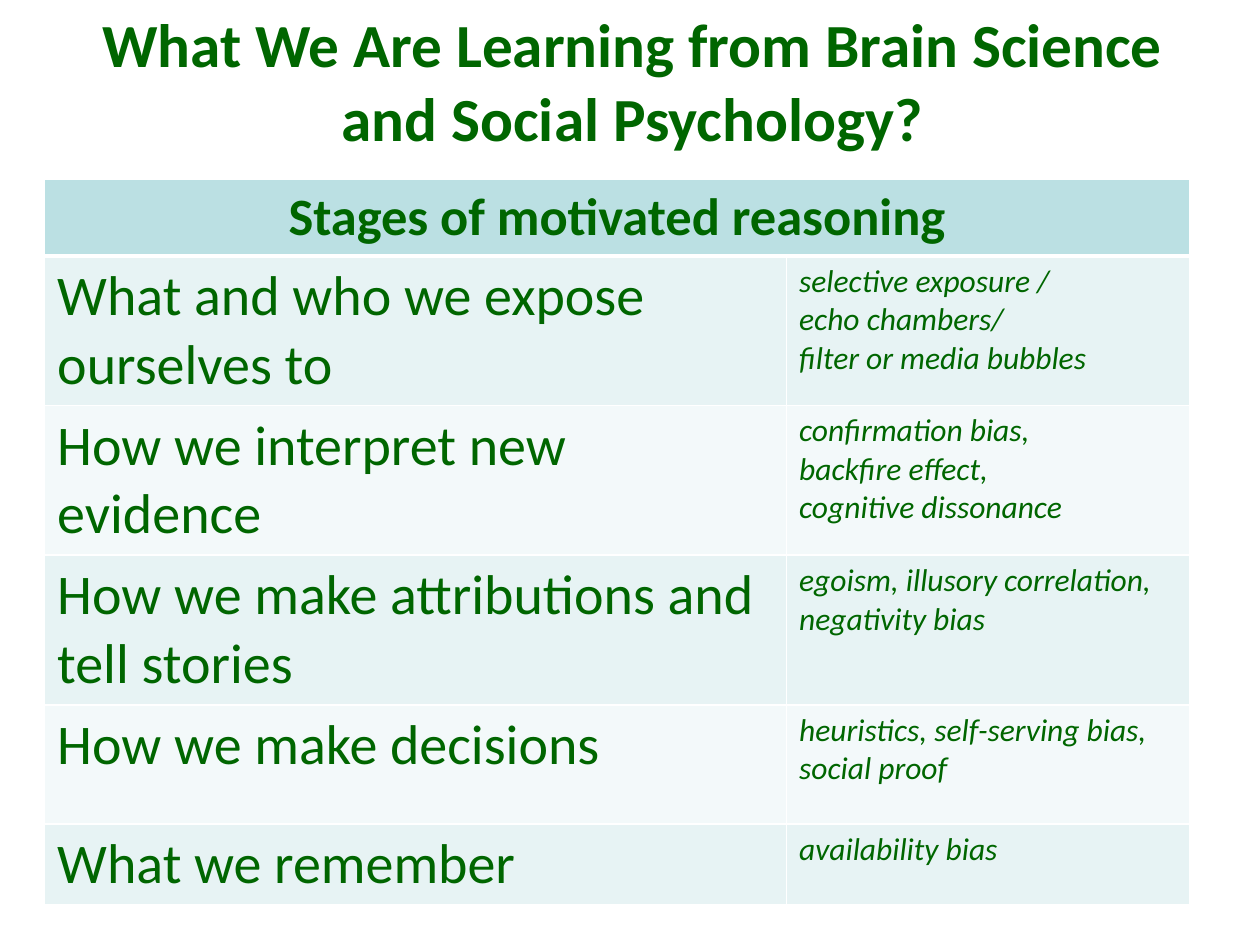
import pptx
import pptx.dml.color
import pptx.enum.text
import pptx.oxml
import pptx.oxml.ns
import pptx.util

Pt = pptx.util.Pt
RGB = pptx.dml.color.RGBColor.from_string
CENTER = pptx.enum.text.PP_ALIGN.CENTER
LEFT = pptx.enum.text.PP_ALIGN.LEFT

COLORS = {
    "text": "006600",
    "head": "BBE0E3",
    "odd": "E7F3F4",
    "even": "F3F9FA",
    "line": "FFFFFF",
}
STAGES = [
    ("What and who we expose ourselves to",
     "selective exposure /\necho chambers/\nfilter or media bubbles"),
    ("How we interpret new evidence",
     "confirmation bias,\nbackfire effect,\ncognitive dissonance"),
    ("How we make attributions and tell stories",
     "egoism, illusory correlation, negativity bias"),
    ("How we make decisions",
     "heuristics, self-serving bias, social proof"),
    ("What we remember", "availability bias"),
]


class Deck:
    """Holds the style and the current slide."""

    font = "Calibri"

    def __init__(self):
        self.show = pptx.Presentation()
        self.show.slide_width, self.show.slide_height = Pt(720), Pt(540)
        self.slide = self.show.slides.add_slide(self.show.slide_layouts[5])

    def label(self, frame, text, size, align=LEFT, bold=False, italic=False):
        frame.text = text
        for para in frame.paragraphs:
            para.alignment = align
            for run in para.runs:
                font = run.font
                font.name, font.size = self.font, Pt(size)
                font.bold, font.italic = bold, italic
                font.color.rgb = RGB(COLORS["text"])

    def title(self, text, left, top, width, height):
        shape = self.slide.shapes.title
        shape.left, shape.top = Pt(left), Pt(top)
        shape.width, shape.height = Pt(width), Pt(height)
        frame = shape.text_frame
        frame.word_wrap = True
        frame.auto_size = pptx.enum.text.MSO_AUTO_SIZE.NONE
        frame.vertical_anchor = pptx.enum.text.MSO_ANCHOR.MIDDLE
        self.label(frame, text, 35, CENTER, bold=True)

    def table(self, left, top, cols, rows):
        frame = self.slide.shapes.add_table(
            len(rows), len(cols), Pt(left), Pt(top), Pt(sum(cols)), Pt(sum(rows)))
        grid = frame.table
        for col, width in zip(grid.columns, cols):
            col.width = Pt(width)
        for row, height in zip(grid.rows, rows):
            row.height = Pt(height)
        return grid

    def paint(self, cell, fill, top=1, bottom=1):
        """Set the borders, then the fill, of a cell."""
        props = cell._tc.get_or_add_tcPr()
        for side, width in zip("LRTB", (1, 1, top, bottom)):
            props.append(pptx.oxml.parse_xml(
                f'<a:ln{side} {pptx.oxml.ns.nsdecls("a")} w="{Pt(width)}">'
                f'<a:solidFill><a:srgbClr val="{COLORS["line"]}"/></a:solidFill>'
                f'</a:ln{side}>'))
        cell.fill.solid()
        cell.fill.fore_color.rgb = RGB(COLORS[fill])


def main():
    deck = Deck()
    deck.title("What We Are Learning from Brain Science and Social Psychology?",
               37.5, 0.75, 648, 90)
    grid = deck.table(25.5, 102.5, [424, 230.5], [42] + [68] * 4 + [39])

    head = grid.cell(0, 0)
    head.merge(grid.cell(0, 1))
    for col in range(2):
        deck.paint(grid.cell(0, col), "head", bottom=3)
    deck.label(head.text_frame, "Stages of motivated reasoning", 30, CENTER, bold=True)

    for row, (stage, bias) in enumerate(STAGES, 1):
        for col in range(2):
            deck.paint(grid.cell(row, col), "odd" if row % 2 else "even",
                       top=3 if row == 1 else 1)
        deck.label(grid.cell(row, 0).text_frame, stage, 32)
        deck.label(grid.cell(row, 1).text_frame, bias, 18, italic=True)

    deck.show.save("out.pptx")


if __name__ == "__main__":
    main()
